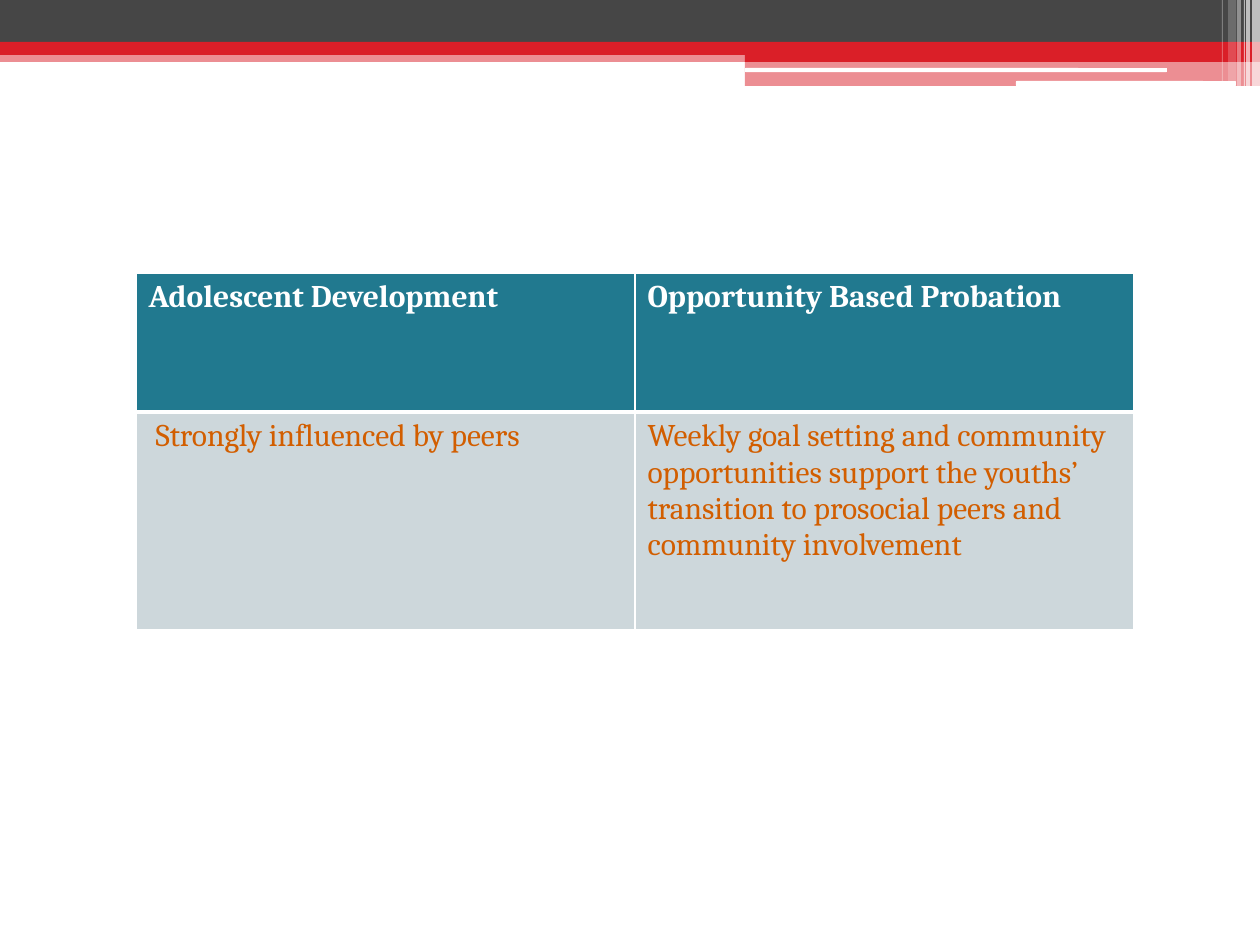
from dataclasses import dataclass

from lxml.etree import SubElement
from pptx import Presentation
from pptx.dml.color import RGBColor
from pptx.enum.shapes import MSO_SHAPE as Shape
from pptx.oxml.ns import qn
from pptx.util import Emu, Pt

PX = 914400 / 126
PAGE_WIDTH, PAGE_HEIGHT = 1260, 945


@dataclass(frozen=True)
class Theme:
    white: str = "FFFFFF"
    dark: str = "464646"
    red: str = "DA1F28"
    header: str = "21798F"
    body: str = "CDD7DB"
    body_text: str = "D25E00"
    font: str = "Cambria"
    text_size: int = 18
    thin: int = 1
    thick: int = 3


THEME = Theme()


def px(length):
    return Emu(round(length * PX))


def paint(fill, color):
    fill.solid()
    fill.fore_color.rgb = RGBColor.from_string(color)


def add_bar(page, box, color, opacity=100, kind=Shape.RECTANGLE):
    bar = page.shapes.add_shape(kind, *map(px, box))
    bar.shadow.inherit = False
    bar.line.fill.background()
    paint(bar.fill, color)
    if opacity < 100:
        tint = bar._element.spPr.find(qn("a:solidFill"))[0]
        SubElement(tint, qn("a:alpha"), val=str(opacity * 1000))
    return bar


def add_banner(page, box):
    left, top, width, height = box
    step = left + 745  # where the deeper right part begins
    right = left + width

    # Full-width bands, then the deeper part on the right
    add_bar(page, (left, top + 50, width, 12), THEME.red, 50)
    add_bar(page, (left, top, width, 43), THEME.dark)
    add_bar(page, (left, top + 42, width, 13), THEME.red)
    add_bar(page, (step, top + 49, right - step, 13), THEME.red)
    add_bar(page, (step, top + 61, right - step, height - 61), THEME.red, 50)

    # White slits
    for slit in ((step, top + 68, 422, 4), (left + 1016, top + 81, 220, 5)):
        add_bar(page, slit, THEME.white, kind=Shape.ROUNDED_RECTANGLE)

    # Translucent stripes: distance from the right edge, width, height, opacity
    stripes = ((8, 8, height, 65), (14, 4, height, 65), (16, 1, height, 60),
               (23, 4, height, 40), (32, 8, 81, 20), (38, 1, 81, 30))
    for offset, stripe_width, stripe_height, opacity in stripes:
        add_bar(page, (right - offset, top, stripe_width, stripe_height),
                THEME.white, opacity)


def set_borders(cell, **widths):
    properties = cell._tc.get_or_add_tcPr()
    for side in "LRTB":
        width = Pt(widths.get(side, THEME.thin))
        line = SubElement(properties, qn(f"a:ln{side}"), w=str(width))
        solid = SubElement(line, qn("a:solidFill"))
        SubElement(solid, qn("a:srgbClr"), val=THEME.white)


def fill_cell(cell, text, color, text_color, bold, **borders):
    set_borders(cell, **borders)
    paint(cell.fill, color)
    cell.text = text
    font = cell.text_frame.paragraphs[0].font
    font.name = THEME.font
    font.size = Pt(THEME.text_size)
    font.bold = bold
    font.color.rgb = RGBColor.from_string(text_color)


def add_comparison(page, box, headings, details):
    left, top, width, height = box
    table = page.shapes.add_table(2, len(headings), *map(px, box)).table
    table.horz_banding = False
    header_height = 139
    table.rows[0].height = px(header_height)
    table.rows[1].height = px(height - header_height)
    for index, (heading, detail) in enumerate(zip(headings, details)):
        table.columns[index].width = px(width / len(headings))
        fill_cell(table.cell(0, index), heading, THEME.header,
                  THEME.white, True, B=THEME.thick)
        fill_cell(table.cell(1, index), detail, THEME.body,
                  THEME.body_text, False, T=THEME.thick)


def main():
    deck = Presentation()
    deck.slide_width, deck.slide_height = px(PAGE_WIDTH), px(PAGE_HEIGHT)
    page = deck.slides.add_slide(deck.slide_layouts[6])  # blank layout
    add_banner(page, (0, 0, PAGE_WIDTH, 86))
    add_comparison(
        page, (136, 273, 998, 357),
        ("Adolescent Development", "Opportunity Based Probation"),
        (" Strongly influenced by peers",
         "Weekly goal setting and community opportunities support the youths’ "
         "transition to prosocial peers and community involvement"),
    )
    deck.save("out.pptx")


if __name__ == "__main__":
    main()
